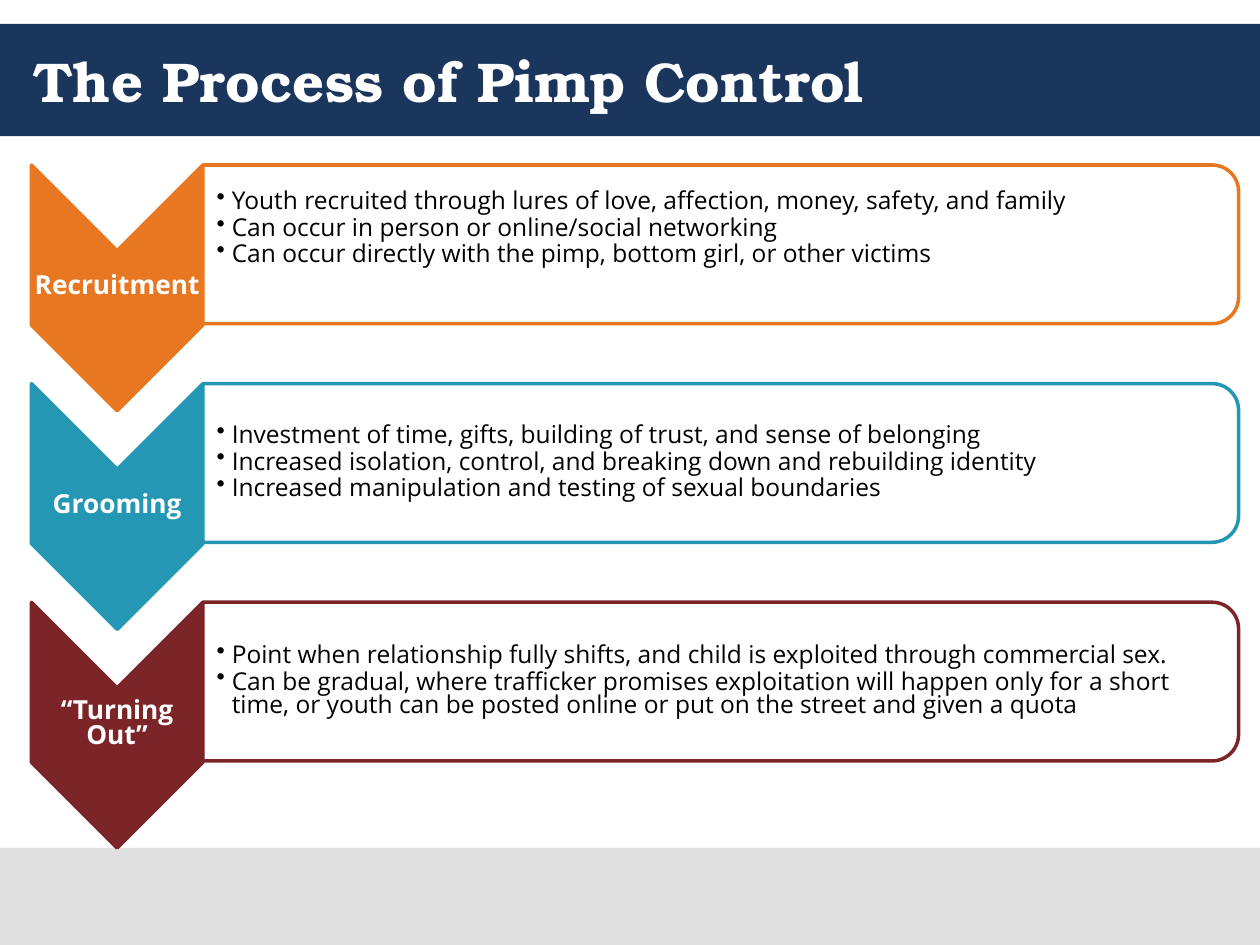
import pptx
import pptx.util
import pptx.dml.color
import pptx.enum.shapes
import pptx.enum.text
import pptx.oxml.ns
from lxml import etree

Inches = pptx.util.Inches
Pt = pptx.util.Pt
Shapes = pptx.enum.shapes.MSO_SHAPE
Align = pptx.enum.text.PP_ALIGN
qn = pptx.oxml.ns.qn

BODY_FONT = "Open Sans"
TITLE_FONT = "TeX Gyre Bonum"
STAGES = [
    ("Recruitment", "E87722", 0.25, [
        "Youth recruited through lures of love, affection, money, safety, and family",
        "Can occur in person or online/social networking",
        "Can occur directly with the pimp, bottom girl, or other victims",
    ]),
    ("Grooming", "2397B3", 0.01, [
        "Investment of time, gifts, building of trust, and sense of belonging",
        "Increased isolation, control, and breaking down and rebuilding identity",
        "Increased manipulation and testing of sexual boundaries",
    ]),
    ("“Turning Out”", "7C2529", 0.01, [
        "Point when relationship fully shifts, and child is exploited through commercial sex.",
        "Can be gradual, where trafficker promises exploitation will happen only for a short "
        "time, or youth can be posted online or put on the street and given a quota",
    ]),
]


def color(hex_string):
    return pptx.dml.color.RGBColor.from_string(hex_string)


def add_filled(slide, kind, left, top, width, height, fill, line=None):
    shape = slide.shapes.add_shape(
        kind, Inches(left), Inches(top), Inches(width), Inches(height))
    shape.shadow.inherit = False
    shape.fill.solid()
    shape.fill.fore_color.rgb = color(fill)
    if line:
        shape.line.color.rgb = color(line)
        shape.line.width = Pt(2)
    else:
        shape.line.fill.background()
    return shape


def add_turned(slide, kind, left, top, width, height, fill, line):
    """Add a shape turned by 90 degrees that covers the given box."""
    shape = add_filled(slide, kind, left + (width - height) / 2,
                       top + (height - width) / 2, height, width, fill, line)
    shape.rotation = 90
    return shape


def add_text(slide, left, top, width, height, lines, font, size, hex_color,
             bold=False, insets=(0.1, 0.05, 0.1, 0.05)):
    """Add a middle-anchored text box and return its paragraphs."""
    box = slide.shapes.add_textbox(
        Inches(left), Inches(top), Inches(width), Inches(height))
    frame = box.text_frame
    frame.word_wrap = True
    frame.vertical_anchor = pptx.enum.text.MSO_ANCHOR.MIDDLE
    (frame.margin_left, frame.margin_top,
     frame.margin_right, frame.margin_bottom) = map(Inches, insets)
    frame.text = "\n".join(lines)
    for paragraph in frame.paragraphs:
        paragraph.font.name = font
        paragraph.font.size = Pt(size)
        paragraph.font.bold = bold
        paragraph.font.color.rgb = color(hex_color)
    return frame.paragraphs


def add_bullet(paragraph, indent):
    properties = paragraph._p.get_or_add_pPr()
    properties.set("marL", str(Inches(indent)))
    properties.set("indent", str(-Inches(indent)))
    bullet = etree.Element(qn("a:buChar"), char="•")
    properties.find(qn("a:defRPr")).addprevious(bullet)


def add_header(slide, left, top, width, height):
    add_filled(slide, Shapes.RECTANGLE, left, top, width, height, "1B365D")
    add_text(slide, left + 0.17, top, width - 0.33, height,
             ["The Process of Pimp Control"], TITLE_FONT, 32, "FFFFFF", bold=True)


def add_stage(slide, left, top, width, name, accent, bottom_inset, points):
    arrow_width, arrow_height, panel_height = 1.36, 1.95, 1.26
    panel_left, panel_width = left + arrow_width, width - arrow_width

    add_turned(slide, Shapes.CHEVRON, left, top, arrow_width, arrow_height,
               accent, accent)
    label = add_text(slide, left, top + 0.68, arrow_width, 0.58, [name],
                     BODY_FONT, 15, "FFFFFF", bold=True, insets=(0.01,) * 4)[0]
    label.alignment = Align.CENTER
    label.line_spacing = 0.8

    panel = add_turned(slide, Shapes.ROUND_2_SAME_RECTANGLE, panel_left, top,
                       panel_width, panel_height, "FFFFFF", accent)
    fill_color = panel._element.spPr.find(qn("a:solidFill"))[0]
    etree.SubElement(fill_color, qn("a:alpha"), val="90000")

    paragraphs = add_text(slide, panel_left, top + 0.06, panel_width - 0.06,
                          panel_height - 0.12, points, BODY_FONT, 14, "000000",
                          insets=(0.11, 0.01, 0.01, bottom_inset))
    for paragraph in paragraphs:
        paragraph.line_spacing = 0.8
        paragraph.space_after = Pt(1.7)
        add_bullet(paragraph, 0.12)


def main():
    presentation = pptx.Presentation()
    presentation.slide_width = Inches(10)
    presentation.slide_height = Inches(7.5)
    slide = presentation.slides.add_slide(presentation.slide_layouts[6])

    add_header(slide, 0, 0.19, 10, 0.89)
    add_filled(slide, Shapes.RECTANGLE, 0, 6.73, 10, 0.77, "E0E0E0")
    for row, stage in enumerate(STAGES):
        add_stage(slide, 0.25, 1.31 + row * 1.735, 9.58, *stage)
    presentation.save("out.pptx")


if __name__ == "__main__":
    main()
